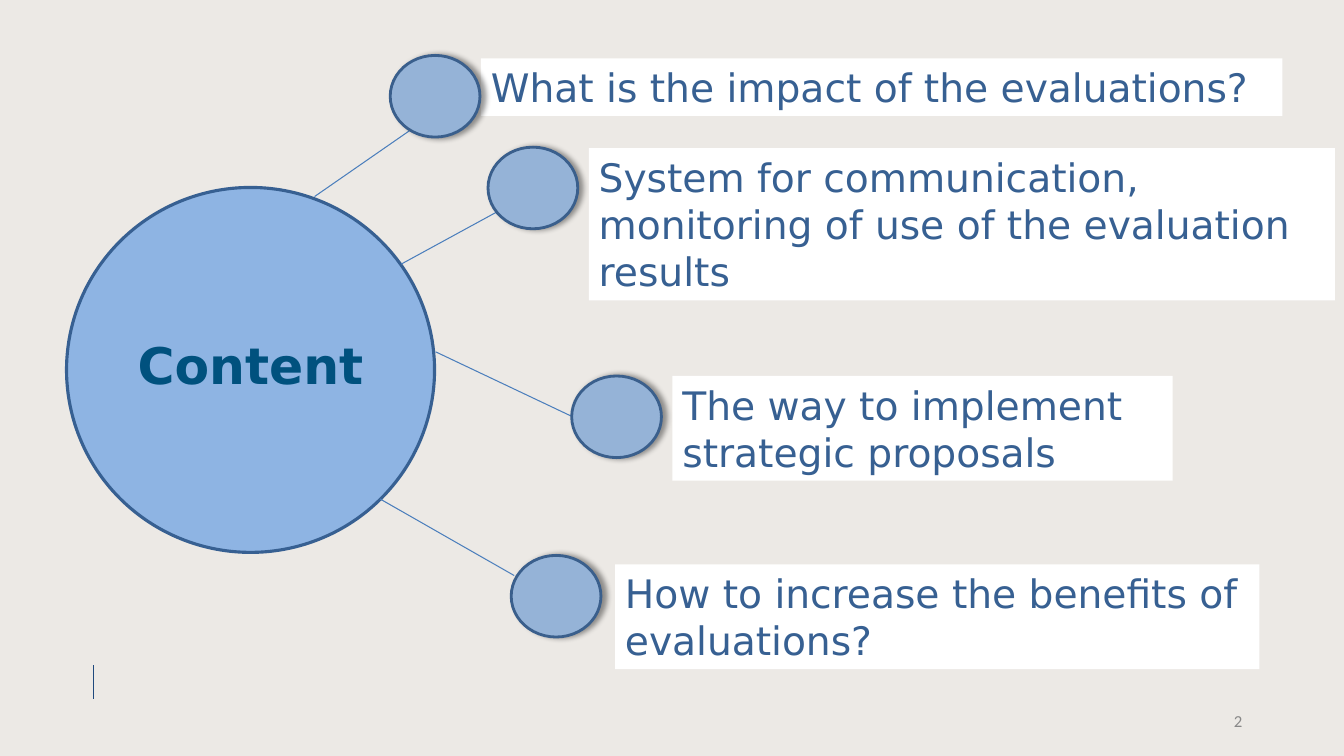
import pptx
import pptx.util
import pptx.dml.color
import pptx.enum.shapes
import pptx.enum.text
import pptx.oxml
import pptx.oxml.ns
import lxml.etree

Inches = pptx.util.Inches
Pt = pptx.util.Pt
RGBColor = pptx.dml.color.RGBColor
MSO_SHAPE = pptx.enum.shapes.MSO_SHAPE
ALIGN = pptx.enum.text.PP_ALIGN
ANCHOR = pptx.enum.text.MSO_ANCHOR

SAND = RGBColor(0xEC, 0xE9, 0xE5)
WHITE = RGBColor(0xFF, 0xFF, 0xFF)
SKY = RGBColor(0x8E, 0xB4, 0xE3)
STEEL = RGBColor(0x95, 0xB3, 0xD7)
BLUE = RGBColor(0x37, 0x60, 0x92)
RIM = RGBColor(0x3A, 0x5F, 0x8C)
TEAL = RGBColor(0x00, 0x51, 0x7E)
SPOKE = RGBColor(0x4B, 0x7E, 0xBC)
NAVY = RGBColor(0x1F, 0x49, 0x7D)
GREY = RGBColor(0x88, 0x88, 0x88)

EFFECT = pptx.oxml.ns.qn("a:effectLst")
SHADOW = (
    '<a:effectLst xmlns:a="http://schemas.openxmlformats.org/drawingml/2006/main">'
    '<a:outerShdw blurRad="50800" dist="38100" dir="0" algn="l" rotWithShape="0">'
    '<a:srgbClr val="000000"><a:alpha val="40000"/></a:srgbClr>'
    '</a:outerShdw></a:effectLst>'
)

deck = pptx.Presentation()
deck.slide_width = Inches(13.33)
deck.slide_height = Inches(7.5)
slide = deck.slides.add_slide(deck.slide_layouts[6])
slide.background.fill.solid()
slide.background.fill.fore_color.rgb = SAND


def add_form(kind, box, fill, line=None, width=0):
    form = slide.shapes.add_shape(kind, *[Inches(v) for v in box])
    form.shadow.inherit = False
    form.fill.solid()
    form.fill.fore_color.rgb = fill
    if line is None:
        form.line.fill.background()
    else:
        form.line.color.rgb = line
        form.line.width = Pt(width)
    return form


def set_text(form, text, size, font, color, align, anchor):
    frame = form.text_frame
    frame.word_wrap = True
    frame.vertical_anchor = anchor
    frame.text = text
    para = frame.paragraphs[0]
    para.alignment = align
    run = para.runs[0]
    run.font.size = Pt(size)
    run.font.name = font
    run.font.color.rgb = color
    return para


page = slide.shapes.add_textbox(Inches(9.42), Inches(6.95), Inches(3), Inches(0.4))
set_text(page, "2", 12, "Calibri", GREY, ALIGN.RIGHT, ANCHOR.MIDDLE)

hub = add_form(MSO_SHAPE.OVAL, (0.66, 1.86, 3.65, 3.62), SKY, BLUE, 2.25)
title = set_text(hub, "Content", 36, "DejaVu Sans", TEAL, ALIGN.CENTER, ANCHOR.MIDDLE)
title.line_spacing = 0.81
title.runs[0].font.bold = True

lines = [
    (0.93, 6.6, 0.93, 6.93, NAVY),
    (3.12, 1.95, 4.36, 1.09, SPOKE),
    (3.98, 2.62, 5.52, 1.78, SPOKE),
    (4.32, 3.49, 5.67, 4.13, SPOKE),
    (3.77, 4.95, 5.1, 5.71, SPOKE),
]
for *ends, color in lines:
    line = slide.shapes.add_connector(
        pptx.enum.shapes.MSO_CONNECTOR.STRAIGHT, *[Inches(v) for v in ends])
    line.line.color.rgb = color
    line.line.width = Pt(0.75)
    lxml.etree.SubElement(line._element.spPr, EFFECT)

topics = [
    ("What is the impact of the evaluations?", (4.77, 0.58, 7.95, 0.57), (3.87, 0.55)),
    ("System for communication, monitoring of use of the evaluation results",
     (5.84, 1.47, 7.4, 1.51), (4.84, 1.46)),
    ("The way to implement strategic proposals", (6.67, 3.73, 4.96, 1.04), (5.67, 3.73)),
    ("How to increase the benefits of evaluations?", (6.1, 5.6, 6.39, 1.04), (5.07, 5.51)),
]
for text, box, spot in topics:
    label = add_form(MSO_SHAPE.RECTANGLE, box, WHITE)
    set_text(label, text, 28, "DejaVu Sans", BLUE, ALIGN.LEFT, ANCHOR.TOP)
    label.text_frame.auto_size = pptx.enum.text.MSO_AUTO_SIZE.SHAPE_TO_FIT_TEXT

    dot = add_form(MSO_SHAPE.OVAL, (*spot, 0.89, 0.81), STEEL, RIM, 2)
    props = dot._element.spPr
    props.replace(props.find(EFFECT), pptx.oxml.parse_xml(SHADOW))

deck.save("out.pptx")
